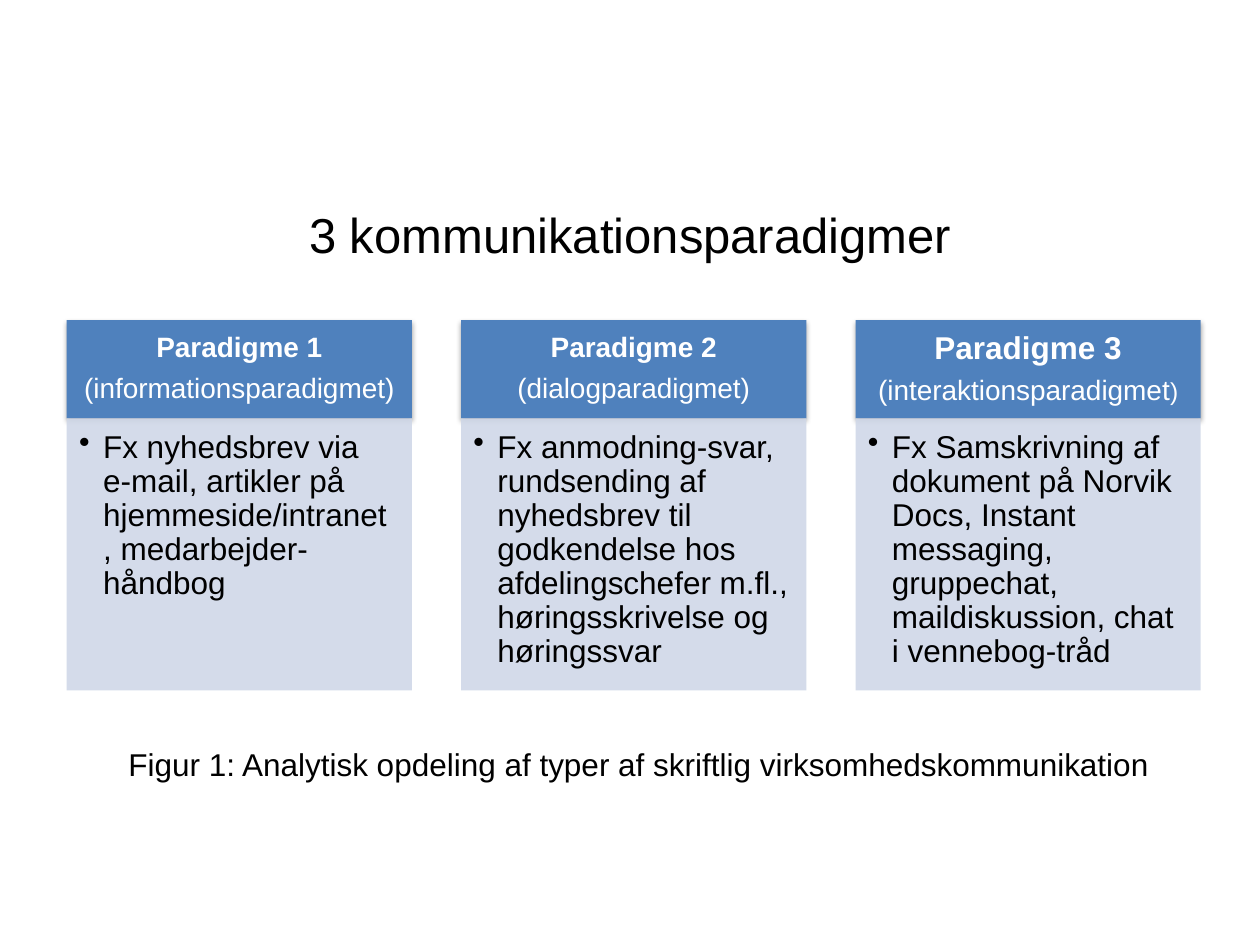
from lxml.etree import SubElement
from pptx import Presentation
from pptx.dml.color import RGBColor
from pptx.enum.shapes import MSO_SHAPE
from pptx.enum.text import MSO_ANCHOR, PP_ALIGN
from pptx.oxml.ns import qn
from pptx.util import Inches, Pt

BLUE = RGBColor(0x4F, 0x81, 0xBD)
PALE = RGBColor(0xD0, 0xD8, 0xE8)
WHITE = RGBColor(0xFF, 0xFF, 0xFF)
BLACK = RGBColor(0x00, 0x00, 0x00)

COLUMN_LEFT, COLUMN_STEP, COLUMN_WIDTH = 0.53, 3.13, 2.74
COLUMN_TOP, HEADER_HEIGHT, BODY_HEIGHT = 2.54, 0.78, 2.16

PARADIGMS = [
    (0.12, ("Paradigme 1", 16), [("(informationsparadigmet)", 16)],
     "Fx nyhedsbrev via e-mail, artikler på hjemmeside/intranet, "
     "medarbejder-håndbog"),
    (0.12, ("Paradigme 2", 16), [("(dialogparadigmet)", 16)],
     "Fx anmodning-svar, rundsending af nyhedsbrev til godkendelse hos "
     "afdelingschefer m.fl., høringsskrivelse og høringssvar"),
    (0.14, ("Paradigme 3", 18), [("(interaktionsparadigmet", 16), (")", 14)],
     "Fx Samskrivning af dokument på Norvik Docs, Instant messaging, "
     "gruppechat, maildiskussion, chat i vennebog-tråd"),
]


def add_span(para, text, size, color=BLACK, bold=False):
    span = para.add_run()
    span.text = text
    span.font.name = "Arial"
    span.font.size = Pt(size)
    span.font.bold = bold
    span.font.color.rgb = color


def set_margins(frame, left, top, right, bottom):
    frame.margin_left, frame.margin_top = Inches(left), Inches(top)
    frame.margin_right, frame.margin_bottom = Inches(right), Inches(bottom)


def add_panel(page, box, color, anchor):
    panel = page.shapes.add_shape(MSO_SHAPE.RECTANGLE, *map(Inches, box))
    panel.shadow.inherit = False
    panel.fill.solid()
    panel.fill.fore_color.rgb = color
    panel.line.fill.background()
    panel.text_frame.word_wrap = True
    panel.text_frame.vertical_anchor = anchor
    return panel


def add_shadow(panel):
    effects = panel._element.spPr.find(qn("a:effectLst"))
    shadow = SubElement(effects, qn("a:outerShdw"), blurRad=str(Pt(3.1)),
                        dist=str(Pt(1.8)), dir="5400000", rotWithShape="0")
    color = SubElement(shadow, qn("a:srgbClr"), val=str(BLACK))
    SubElement(color, qn("a:alpha"), val="35000")


def add_header(page, box, margin, title, subtitle):
    panel = add_panel(page, box, BLUE, MSO_ANCHOR.MIDDLE)
    add_shadow(panel)
    frame = panel.text_frame
    set_margins(frame, margin, 0.07, margin, 0.07)
    title_para, subtitle_para = frame.paragraphs[0], frame.add_paragraph()
    for para in (title_para, subtitle_para):
        para.alignment = PP_ALIGN.CENTER
        para.line_spacing = 0.9
    title_para.space_after = Pt(6)
    add_span(title_para, *title, WHITE, True)
    for text, size in subtitle:
        add_span(subtitle_para, text, size, WHITE)


def add_body(page, box, text):
    panel = add_panel(page, box, PALE, MSO_ANCHOR.TOP)
    fill_color = panel._element.spPr.find(qn("a:solidFill"))[0]
    SubElement(fill_color, qn("a:alpha"), val="90000")
    set_margins(panel.text_frame, 0.1, 0.1, 0.14, 0.16)
    para = panel.text_frame.paragraphs[0]
    para.alignment = PP_ALIGN.LEFT
    para.line_spacing = 0.9
    properties = para._p.get_or_add_pPr()
    properties.set("marL", str(Inches(0.19)))
    properties.set("indent", str(-Inches(0.19)))
    SubElement(properties, qn("a:buChar"), char="•")
    add_span(para, text, 18)


def add_column(page, box, margin, title, subtitle, text):
    left, top, width, height = box
    add_header(page, (left, top, width, HEADER_HEIGHT), margin, title, subtitle)
    add_body(page, (left, top + HEADER_HEIGHT, width, height - HEADER_HEIGHT), text)


def add_label(page, box, text, size, alignment, wrap):
    frame = page.shapes.add_textbox(*map(Inches, box)).text_frame
    frame.word_wrap = wrap
    frame.vertical_anchor = MSO_ANCHOR.MIDDLE
    para = frame.paragraphs[0]
    para.alignment = alignment
    add_span(para, text, size)


def main():
    deck = Presentation()
    deck.slide_width, deck.slide_height = Inches(10), Inches(7.5)
    page = deck.slides.add_slide(deck.slide_layouts[6])
    add_label(page, (0.5, 1.23, 9, 1.25), "3 kommunikationsparadigmer", 28,
              PP_ALIGN.CENTER, True)
    for index, paradigm in enumerate(PARADIGMS):
        box = (COLUMN_LEFT + index * COLUMN_STEP, COLUMN_TOP,
               COLUMN_WIDTH, HEADER_HEIGHT + BODY_HEIGHT)
        add_column(page, box, *paradigm)
    add_label(page, (0.92, 5.86, 8.38, 0.4),
              "Figur 1: Analytisk opdeling af typer af skriftlig "
              "virksomhedskommunikation", 18, PP_ALIGN.LEFT, False)
    deck.save("out.pptx")


if __name__ == "__main__":
    main()
